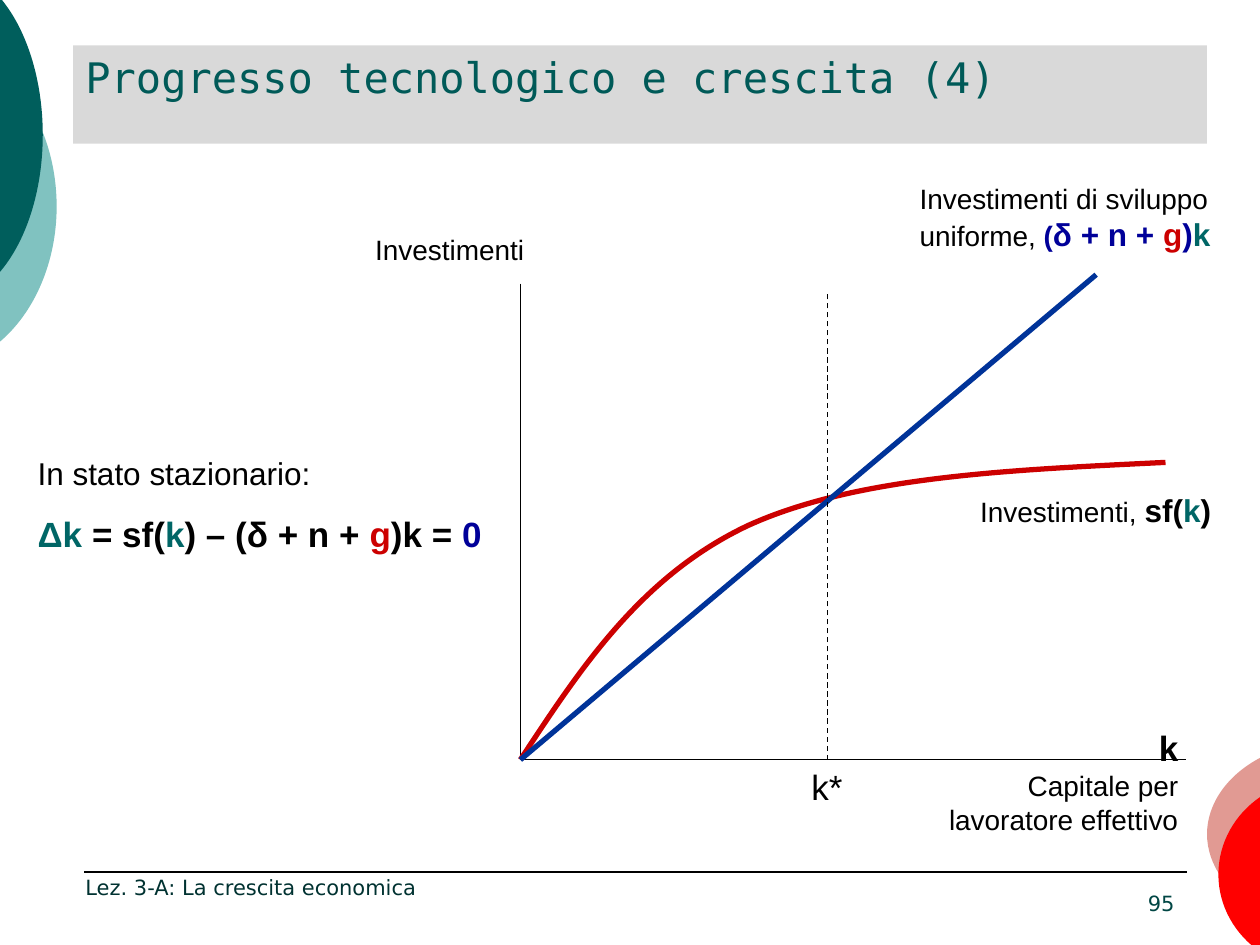
from lxml import etree
from pptx import Presentation
from pptx.dml.color import RGBColor
from pptx.enum.dml import MSO_LINE
from pptx.enum.shapes import MSO_CONNECTOR, MSO_SHAPE
from pptx.enum.text import MSO_ANCHOR, PP_ALIGN
from pptx.oxml.ns import qn
from pptx.util import Inches, Pt

LEFT, RIGHT = PP_ALIGN.LEFT, PP_ALIGN.RIGHT
TOP, BOTTOM = MSO_ANCHOR.TOP, MSO_ANCHOR.BOTTOM
DASH = MSO_LINE.DASH
STRAIGHT = MSO_CONNECTOR.STRAIGHT
RECTANGLE = MSO_SHAPE.RECTANGLE

WIDTH, HEIGHT = 10, 7.5
BLACK, TEAL, RED, NAVY, BLUE = "000000", "006666", "CC0000", "000099", "003399"
ORIGIN = (4.13, 6.03)
STEADY_X = 6.57

# Edge ornaments: colour, frame, start point, Bezier segments
ORNAMENTS = [
    ("80C2C0", (-1.69, 0.31, 2.15, 2.65), (-0.01, 0.55),
     [((0.28, 0.8), (0.45, 1.2), (0.45, 1.64)),
      ((0.45, 2.07), (0.28, 2.48), (-0.01, 2.72))]),
    ("005E5C", (-1.27, -0.27, 1.61, 2.67), (-0.01, -0.03),
     [((0.21, 0.22), (0.34, 0.63), (0.34, 1.07)),
      ((0.34, 1.51), (0.21, 1.92), (-0.01, 2.17))]),
    ("E19A93", (9.58, 5.88, 2.04, 1.48), (10.01, 7.23),
     [((9.74, 7.09), (9.58, 6.86), (9.58, 6.62)),
      ((9.58, 6.38), (9.74, 6.15), (10.01, 6.01))]),
    ("FF0000", (9.67, 6.19, 1.53, 1.5), (10.01, 7.56),
     [((9.8, 7.42), (9.67, 7.19), (9.67, 6.94)),
      ((9.67, 6.69), (9.8, 6.46), (10.01, 6.32))]),
]
INVESTMENT_FRAME = (4.13, 3.67, 5.12, 2.36)
INVESTMENT_CURVE = [((4.61, 5.3), (5.09, 4.57), (5.94, 4.17)),
                    ((6.8, 3.78), (8.02, 3.73), (9.25, 3.67))]

# Lines: from, to, colour, width, dash
FOOTER_RULE = ((0.67, 6.92), (9.42, 6.92), BLACK, 0.75, None)
AXES = [
    ((4.13, 2.25), ORIGIN, BLACK, 0.75, None),
    (ORIGIN, (9.41, 6.03), BLACK, 0.75, None),
]
GRAPH_LINES = [
    (ORIGIN, (8.7, 2.18), BLUE, 3, None),
    ((STEADY_X, 6.03), (STEADY_X, 2.33), BLACK, 0.75, DASH),
]

# Texts: box, font, alignment, anchor,
# paragraphs of (space before, right indent, runs of (text, size, colour, bold))
TITLE = ((0.58, 0.36, 9, 0.78), "DejaVu Sans Mono", LEFT, TOP,
         [(0, 0, [("Progresso tecnologico e crescita (4)", 24, "005A58", False)])])
TEXTS = [
    ((8.15, 6.82, 1.27, 0.5), "DejaVu Sans", RIGHT, BOTTOM,
     [(0, 0, [("95", 12, "004644", False)])]),
    ((0.58, 6.83, 4.34, 0.36), "DejaVu Sans", LEFT, BOTTOM,
     [(0, 0, [("Lez. 3-A: La crescita economica", 12, "003231", False)])]),
    ((2.88, 1.8, 3.23, 0.37), "Arial", LEFT, TOP,
     [(0, 0, [("Investimenti", 16, BLACK, False)])]),
    ((7.04, 5.72, 2.53, 0.98), "Arial", RIGHT, TOP,
     [(0, 0.12, [("k", 20, BLACK, True)]),
      (0, 0, [("Capitale per lavoratore effettivo", 16, BLACK, False)])]),
    ((7.68, 3.85, 2.28, 0.4), "Arial", LEFT, TOP,
     [(0, 0, [("Investimenti, ", 16, BLACK, False), ("sf(", 18, BLACK, True),
              ("k", 18, TEAL, True), (")", 18, BLACK, True)])]),
    ((7.2, 1.39, 2.6, 0.67), "Arial", LEFT, TOP,
     [(0, 0, [("Investimenti di sviluppo uniforme, ", 16, BLACK, False),
              ("(", 16, NAVY, True), ("δ + n + ", 18, NAVY, True),
              ("g", 18, RED, True), (")", 18, NAVY, True),
              ("k", 18, TEAL, True)])]),
    ((6.34, 6.03, 0.79, 0.43), "Arial", LEFT, TOP,
     [(0, 0, [("k*", 20, BLACK, False)])]),
    ((0.2, 3.55, 3.8, 1.28), "Arial", LEFT, TOP,
     [(0, 0, [("In stato stazionario:", 18, BLACK, False)]),
      (12, 0, [("Δk ", 20, TEAL, True), ("= sf(", 20, BLACK, True),
               ("k", 20, TEAL, True), (") – (δ + n + ", 20, BLACK, True),
               ("g", 20, RED, True), (")k = ", 20, BLACK, True),
               ("0", 20, NAVY, True)])]),
]


def color(value):
    return RGBColor.from_string(value)


def add_curve(slide, frame, start, segments, close):
    """Add a freeform of cubic Bezier segments, given in slide inches."""
    left, top, width, height = map(Inches, frame)
    builder = slide.shapes.build_freeform(left, top)
    builder.add_line_segments([(left + width, top + height)], close=False)
    shape = builder.convert_to_shape()
    shape.shadow.inherit = False
    outline = next(shape._element.iter(qn("a:path")))
    for child in list(outline):
        outline.remove(child)
    commands = [("a:moveTo", [start])]
    commands += [("a:cubicBezTo", points) for points in segments]
    if close:
        commands.append(("a:close", []))
    for tag, points in commands:
        command = etree.SubElement(outline, qn(tag))
        for x, y in points:
            etree.SubElement(command, qn("a:pt"), x=str(Inches(x) - left),
                             y=str(Inches(y) - top))
    return shape


def add_line(slide, start, end, line_color, width, dash):
    line = slide.shapes.add_connector(
        STRAIGHT, *(Inches(value) for value in start + end))
    line.line.color.rgb = color(line_color)
    line.line.width = Pt(width)
    if dash:
        line.line.dash_style = dash
    etree.SubElement(line._element.spPr, qn("a:effectLst"))


def write_text(shape, font, alignment, anchor, paragraphs):
    frame = shape.text_frame
    frame.word_wrap = True
    frame.vertical_anchor = anchor
    for index, (space_before, indent, runs) in enumerate(paragraphs):
        para = frame.add_paragraph() if index else frame.paragraphs[0]
        para.alignment = alignment
        para.space_before = Pt(space_before)
        if indent:
            para._p.get_or_add_pPr().set("marR", str(Inches(indent)))
        for text, size, text_color, bold in runs:
            span = para.add_run()
            span.text = text
            span.font.name = font
            span.font.size = Pt(size)
            span.font.bold = bold
            span.font.color.rgb = color(text_color)


def main():
    deck = Presentation()
    deck.slide_width, deck.slide_height = Inches(WIDTH), Inches(HEIGHT)
    slide = deck.slides.add_slide(deck.slide_layouts[6])

    for fill, frame, start, segments in ORNAMENTS:
        ornament = add_curve(slide, frame, start, segments, True)
        ornament.fill.solid()
        ornament.fill.fore_color.rgb = color(fill)
        ornament.line.fill.background()
    add_line(slide, *FOOTER_RULE)

    place, *style = TITLE
    banner = slide.shapes.add_shape(RECTANGLE, *map(Inches, place))
    banner.shadow.inherit = False
    banner.fill.solid()
    banner.fill.fore_color.rgb = color("D9D9D9")
    banner.line.fill.background()
    write_text(banner, *style)

    for axis in AXES:
        add_line(slide, *axis)
    investment = add_curve(slide, INVESTMENT_FRAME, ORIGIN, INVESTMENT_CURVE, False)
    investment.fill.background()
    investment.line.color.rgb = color(RED)
    investment.line.width = Pt(3)
    for line in GRAPH_LINES:
        add_line(slide, *line)

    for place, *style in TEXTS:
        box = slide.shapes.add_textbox(*map(Inches, place))
        write_text(box, *style)

    deck.save("out.pptx")


if __name__ == "__main__":
    main()
